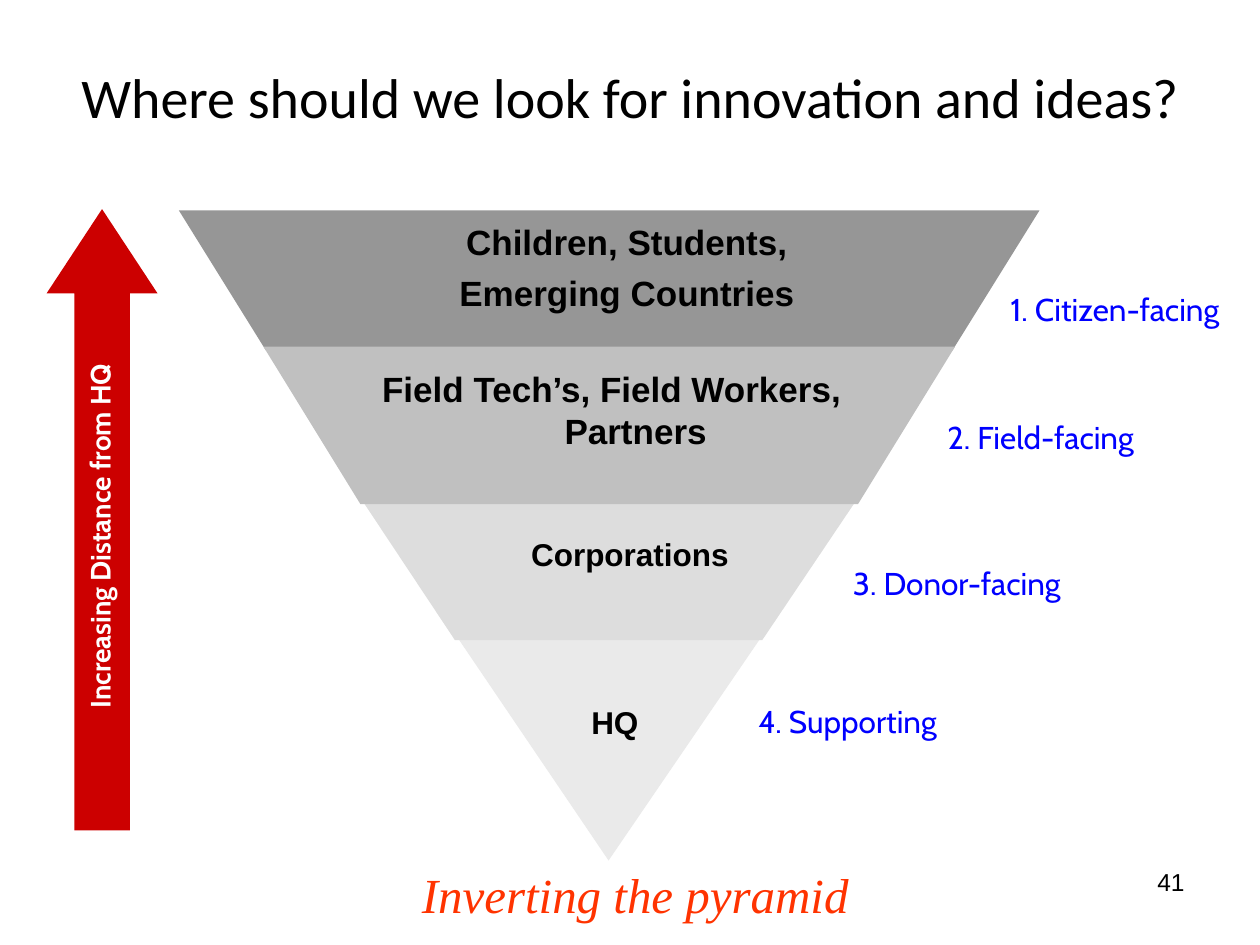
from lxml import etree
from pptx import Presentation, util as u
from pptx.dml.color import RGBColor
from pptx.enum import shapes, text

PX = 9144  # 100 px to the inch

BLACK = RGBColor(0x00, 0x00, 0x00)
WHITE = RGBColor(0xFF, 0xFF, 0xFF)
RED = RGBColor(0xCC, 0x00, 0x00)
ORANGE = RGBColor(0xFF, 0x33, 0x00)
BLUE = RGBColor(0x00, 0x00, 0xFF)
GREYS = [RGBColor(v, v, v) for v in (0x96, 0xEA, 0xDD, 0xC0)]

LEFT, CENTER, RIGHT = (text.PP_ALIGN.LEFT, text.PP_ALIGN.CENTER,
                       text.PP_ALIGN.RIGHT)

# Corner points of each tier, from back to front
TIERS = [
    [(142, 167), (825, 167), (756, 278), (211, 278)],
    [(359, 500), (608, 500), (483, 683)],
    [(284, 392), (683, 392), (605, 508), (361, 508)],
    [(209, 275), (758, 275), (681, 400), (286, 400)],
]

# Lines, size, box
TIER_LABELS = [
    (["HQ"], 18, (367, 558, 242, 30)),
    (["Corporations"], 18, (325, 425, 350, 30)),
    (["Field Tech’s, Field Workers, Partners"], 20, (288, 292, 395, 67)),
    (["Children, Students,", "Emerging Countries"], 20, (350, 175, 295, 74)),
]

# Text, box, wrap
FACINGS = [
    ("3. Donor-facing", (667, 443, 191, 40), False),
    ("2. Field-facing", (742, 327, 177, 40), False),
    ("1. Citizen-facing", (792, 225, 201, 40), True),
    ("4. Supporting", (592, 552, 169, 40), False),
]


def px(box):
    return [n * PX for n in box]


def write(p, words, font, size, color, align=LEFT, bold=False, italic=False):
    p.alignment = align
    r = p.add_run()
    r.text = words
    f = r.font
    f.name, f.size, f.bold, f.italic = font, u.Pt(size), bold, italic
    f.color.rgb = color


def paint(sp, color):
    sp.shadow.inherit = False
    sp.fill.solid()
    sp.fill.fore_color.rgb = color
    sp.line.fill.background()


def add_title(s, words):
    sp = s.shapes.title
    sp.left, sp.top, sp.width, sp.height = px((17, 8, 967, 100))
    tf = sp.text_frame
    tf.vertical_anchor = text.MSO_ANCHOR.BOTTOM
    write(tf.paragraphs[0], words, "Calibri", 32, BLACK, CENTER)


def add_box(s, box, wrap=True, inset=True):
    sp = s.shapes.add_textbox(*px(box))
    tf = sp.text_frame
    tf.word_wrap = wrap
    if not inset:
        tf.margin_left = tf.margin_top = 0
        tf.margin_right = tf.margin_bottom = 0
    return sp


def add_line(s, words, box, font, size, color, wrap=True, **style):
    sp = add_box(s, box, wrap)
    write(sp.text_frame.paragraphs[0], words, font, size, color, **style)


def add_distance_arrow(s):
    sp = s.shapes.add_shape(shapes.MSO_SHAPE.UP_ARROW, *px((37, 166, 88, 493)))
    sp.adjustments[0], sp.adjustments[1] = 0.5, 0.76
    paint(sp, RED)
    label = add_box(s, (-120, 412, 398, 27), inset=False)
    label.rotation = 270
    write(label.text_frame.paragraphs[0], "Increasing Distance from HQ",
          "Cabin", 16, WHITE, CENTER, bold=True)


def add_tier(s, points, color):
    start, *rest = points
    fb = s.shapes.build_freeform(*start, scale=PX)
    fb.add_line_segments(rest, close=True)
    paint(fb.convert_to_shape(), color)


def add_tier_label(s, lines, size, box):
    """Centred bold lines with a hanging indent."""
    tf = add_box(s, box, inset=False).text_frame
    for i, line in enumerate(lines):
        p = tf.add_paragraph() if i else tf.paragraphs[0]
        if i:
            p.space_before = u.Pt(5)
        pPr = p._p.get_or_add_pPr()
        pPr.set("marL", str(38 * PX))
        pPr.set("indent", str(-38 * PX))
        write(p, line, "Arial", size, BLACK, CENTER, bold=True)


def main():
    prs = Presentation()
    prs.slide_width, prs.slide_height = px((1000, 750))
    s = prs.slides.add_slide(prs.slide_layouts[5])

    add_title(s, "Where should we look for innovation and ideas?")
    add_distance_arrow(s)
    for points, grey in zip(TIERS, GREYS):
        add_tier(s, points, grey)
    for label in TIER_LABELS:
        add_tier_label(s, *label)
    add_line(s, "41", (717, 683, 233, 52), "Arial", 14, BLACK, align=RIGHT)
    add_line(s, "Inverting the pyramid", (325, 681, 359, 57),
             "Times New Roman", 28, ORANGE, wrap=False, italic=True)
    for words, box, wrap in FACINGS:
        add_line(s, words, box, "Cabin", 18, BLUE, wrap)

    prs.save("out.pptx")


if __name__ == "__main__":
    main()
